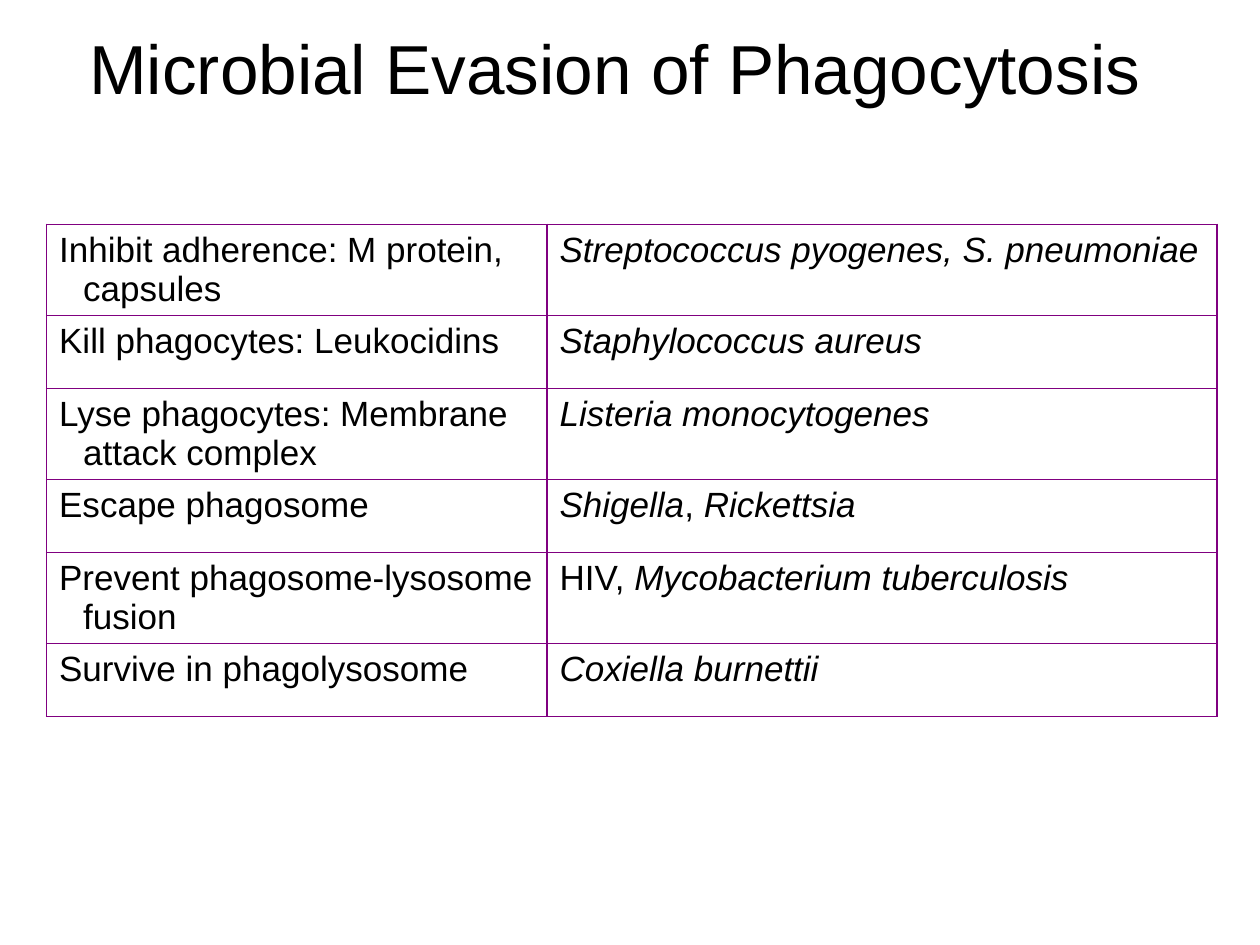
from pptx import Presentation
from pptx.dml.color import RGBColor as RGB
from pptx.enum.text import MSO_ANCHOR as Anchor, PP_ALIGN as Align
from pptx.oxml import parse_xml
from pptx.oxml.ns import nsdecls
from pptx.util import Pt

BLACK = RGB(0x00, 0x00, 0x00)
PURPLE = RGB(0x80, 0x00, 0x80)
FONT = "Arial"
COLS = (286, 383)
TALL, SHORT = 52, 41.75  # rows with two lines and with one
HANG = 13.75

# Evasion method, then the microbes as (text, italic) runs
ROWS = [
    ("Inhibit adherence: M protein, capsules",
     [("Streptococcus pyogenes, S. pneumoniae", True)]),
    ("Kill phagocytes: Leukocidins", [("Staphylococcus aureus", True)]),
    ("Lyse phagocytes: Membrane attack complex",
     [("Listeria monocytogenes", True)]),
    ("Escape phagosome",
     [("Shigella", True), (", ", False), ("Rickettsia", True)]),
    ("Prevent phagosome-lysosome fusion",
     [("HIV, ", False), ("Mycobacterium tuberculosis", True)]),
    ("Survive in phagolysosome", [("Coxiella burnettii", True)]),
]


def add_run(para, text, size, italic=False):
    run = para.add_run()
    run.text = text
    font = run.font
    font.name, font.size, font.italic = FONT, Pt(size), italic
    font.color.rgb = BLACK


def add_title(slide, text):
    box = slide.shapes.add_textbox(Pt(9.5), Pt(8), Pt(684), Pt(60))
    frame = box.text_frame
    frame.word_wrap = True
    frame.vertical_anchor = Anchor.MIDDLE
    para = frame.paragraphs[0]
    para.alignment = Align.CENTER
    add_run(para, text, 39.6)


def set_edges(cell):
    props = cell._tc.get_or_add_tcPr()
    for side in "LRTB":
        props.append(parse_xml(
            f'<a:ln{side} {nsdecls("a")} w="{Pt(1)}"><a:solidFill>'
            f'<a:srgbClr val="{PURPLE}"/></a:solidFill></a:ln{side}>'))


def fill_cell(cell, runs, hang=False):
    set_edges(cell)
    cell.fill.background()
    para = cell.text_frame.paragraphs[0]
    if hang:
        props = para._p.get_or_add_pPr()
        props.set("marL", str(Pt(HANG)))
        props.set("indent", str(-Pt(HANG)))
    for text, italic in runs:
        add_run(para, text, 20, italic)


def add_grid(slide):
    high = (TALL + SHORT) * len(ROWS) / 2
    frame = slide.shapes.add_table(
        len(ROWS), len(COLS), Pt(26.6), Pt(128.2), Pt(sum(COLS)), Pt(high))
    table = frame.table
    table.first_row = table.horz_banding = False
    for col, wide in zip(table.columns, COLS):
        col.width = Pt(wide)
    for i, (method, microbes) in enumerate(ROWS):
        tall = i % 2 == 0
        table.rows[i].height = Pt(TALL if tall else SHORT)
        fill_cell(table.cell(i, 0), [(method, False)], hang=tall)
        fill_cell(table.cell(i, 1), microbes)


def main():
    deck = Presentation()
    deck.slide_width, deck.slide_height = Pt(720), Pt(540)
    slide = deck.slides.add_slide(deck.slide_layouts[6])
    add_grid(slide)
    add_title(slide, "Microbial Evasion of Phagocytosis")
    deck.save("out.pptx")


if __name__ == "__main__":
    main()
